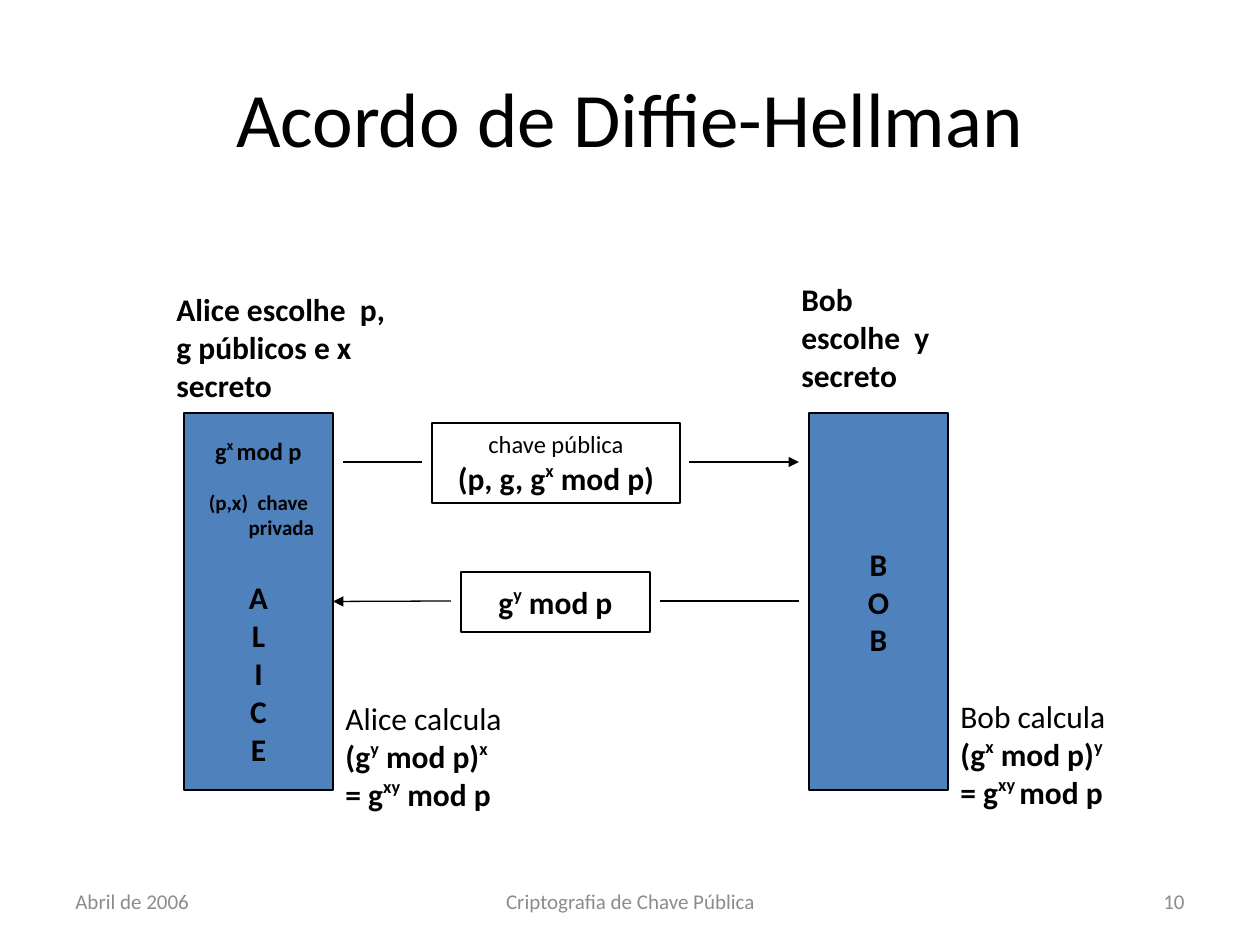
import pptx
import pptx.util
import pptx.dml.color
import pptx.enum.shapes
import pptx.enum.text
import pptx.oxml
import pptx.oxml.ns

PX = 914400 // 126
BLACK = pptx.dml.color.RGBColor(0x00, 0x00, 0x00)
WHITE = pptx.dml.color.RGBColor(0xFF, 0xFF, 0xFF)
BLUE = pptx.dml.color.RGBColor(0x4F, 0x81, 0xBD)
GRAY = pptx.dml.color.RGBColor(0x8C, 0x8C, 0x8C)
ALIGN = pptx.enum.text.PP_ALIGN
ANCHOR = pptx.enum.text.MSO_ANCHOR


def write(shape, lines, align, anchor, color=BLACK):
    frame = shape.text_frame
    frame.word_wrap = True
    frame.vertical_anchor = anchor
    for index, (text, size, bold, *gap) in enumerate(lines):
        paragraph = frame.add_paragraph() if index else frame.paragraphs[0]
        paragraph.alignment = align
        if gap:
            paragraph.space_before = pptx.util.Pt(gap[0])
        for part, piece in enumerate(text.split("^")):
            if not piece:
                continue
            run = paragraph.add_run()
            run.text = piece
            run.font.name = "Calibri"
            run.font.size = pptx.util.Pt(size)
            run.font.bold = bold
            run.font.color.rgb = color
            if part % 2:
                run.font._element.set("baseline", "40000")


presentation = pptx.Presentation()
presentation.slide_width = 1260 * PX
presentation.slide_height = 945 * PX
slide = presentation.slides.add_slide(presentation.slide_layouts[5])

title = slide.shapes.title
title.left, title.top, title.width, title.height = [n * PX for n in (63, 38, 1134, 157)]
write(title, [("Acordo de Diffie-Hellman", 44, False)], ALIGN.CENTER, ANCHOR.MIDDLE)

alice_lines = [
    ("g^x ^mod p", 14, True),
    ("(p,x)  chave", 12, True, 14),
    ("privada", 12, True),
    ("A", 18, True, 22),
] + [(letter, 18, True) for letter in "LICE"]
bob_lines = [(letter, 18, True) for letter in "BOB"]
public_key_lines = [("chave pública", 14, False), ("(p, g, g^x^ mod p)", 18, True)]
boxes = []
for bounds, fill, lines in [
    ((184, 413, 149, 377), BLUE, alice_lines),
    ((809, 413, 139, 377), BLUE, bob_lines),
    ((432, 423, 248, 80), WHITE, public_key_lines),
    ((461, 572, 189, 60), WHITE, [("g^y^ mod p", 18, True)]),
]:
    box = slide.shapes.add_shape(
        pptx.enum.shapes.MSO_SHAPE.RECTANGLE, *[n * PX for n in bounds])
    box.shadow.inherit = False
    box.fill.solid()
    box.fill.fore_color.rgb = fill
    box.line.color.rgb = BLACK
    box.line.width = pptx.util.Pt(0.75)
    write(box, lines, ALIGN.CENTER, ANCHOR.MIDDLE)
    boxes.append(box)
alice = boxes[0]
private_key = alice.text_frame.paragraphs[2]
private_key._p.get_or_add_pPr().set("marL", str(46 * PX))

alice_choice = [("Alice escolhe  p, g públicos e x secreto", 18, True)]
bob_choice = [(text, 18, True) for text in ("Bob", "escolhe  y", "secreto")]
alice_result = [("Alice calcula", 18, False), ("(g^y^ mod p)^x^", 18, True),
                ("= g^xy^ mod p", 18, True)]
bob_result = [("Bob calcula", 18, False), ("(g^x^ mod p)^y^", 18, True),
              ("= g^xy ^mod p", 18, True)]
for bounds, lines, align, anchor, color in [
    ((164, 284, 238, 126), alice_choice, ALIGN.LEFT, ANCHOR.TOP, BLACK),
    ((789, 274, 208, 126), bob_choice, ALIGN.LEFT, ANCHOR.TOP, BLACK),
    ((333, 693, 218, 126), alice_result, ALIGN.LEFT, ANCHOR.TOP, BLACK),
    ((948, 691, 258, 126), bob_result, ALIGN.LEFT, ANCHOR.TOP, BLACK),
    ((63, 876, 294, 50), [("Abril de 2006", 12, False)], ALIGN.LEFT, ANCHOR.MIDDLE, GRAY),
    ((431, 876, 399, 50), [("Criptografia de Chave Pública", 12, False)],
     ALIGN.CENTER, ANCHOR.MIDDLE, GRAY),
    ((903, 876, 294, 50), [("10", 12, False)], ALIGN.RIGHT, ANCHOR.MIDDLE, GRAY),
]:
    label = slide.shapes.add_textbox(*[n * PX for n in bounds])
    write(label, lines, align, anchor, color)

for start, end, y, arrow, target in [
    (343, 422, 462, False, None),
    (689, 799, 462, True, None),
    (660, 799, 601, False, None),
    (451, 333, 601, True, alice),
]:
    connector = slide.shapes.add_connector(
        pptx.enum.shapes.MSO_CONNECTOR.STRAIGHT, start * PX, y * PX, end * PX, y * PX)
    connector.line.color.rgb = BLACK
    connector.line.width = pptx.util.Pt(0.75)
    if arrow:
        line = connector.line._get_or_add_ln()
        line.append(pptx.oxml.parse_xml(
            f'<a:tailEnd {pptx.oxml.ns.nsdecls("a")} type="triangle"/>'))
    connector._element.spPr.append(
        pptx.oxml.parse_xml(f'<a:effectLst {pptx.oxml.ns.nsdecls("a")}/>'))
    if target:
        connector.end_connect(target, 3)

presentation.save("out.pptx")
